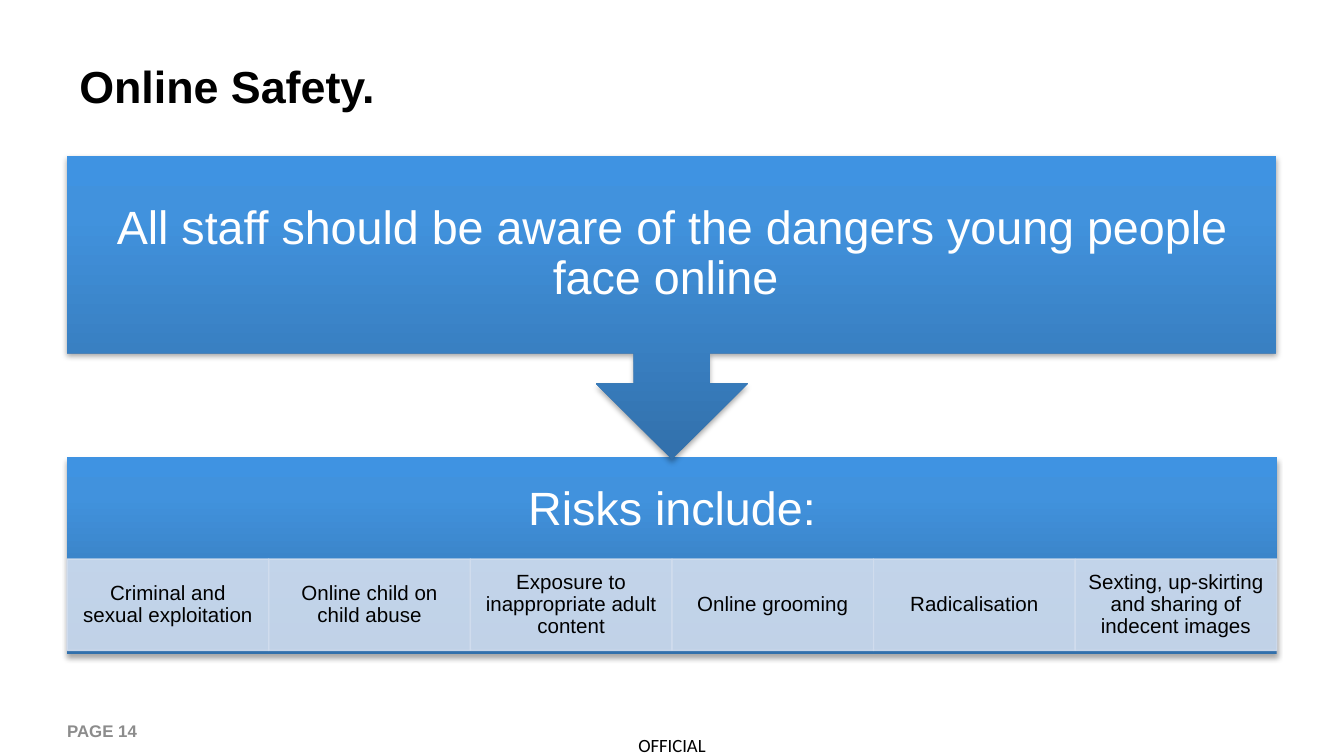
from lxml import etree
from pptx import Presentation
from pptx import util as u
from pptx.dml.color import RGBColor
from pptx.enum import shapes, text
from pptx.oxml import parse_xml
from pptx.oxml.ns import nsdecls, qn

INK, WHITE, GREY, PALE = "000000", "FFFFFF", "8C8C8C", "D1DDEE"
BLUES = [(0, "3270AB"), (80, "4192DD"), (100, "3F93E2")]
LEFT, WIDTH = 0.5, 9
RISKS = [
    "Criminal and sexual exploitation",
    "Online child on child abuse",
    "Exposure to inappropriate adult content",
    "Online grooming",
    "Radicalisation",
    "Sexting, up-skirting and sharing of indecent images",
]
FOOTER = {"size": 9, "margins": (0.09, 0.04), "color": GREY, "bold": True}
TITLE = {"size": 24, "margins": (0.09, 0.04), "bold": True}
HEADING = {"size": 25, "color": WHITE, "margins": (0.19, 0.19),
           "centred": True, "spacing": 0.9}
RISK = {"size": 11, "margins": (0.09, 0.02), "centred": True, "spacing": 0.9}


def rgb(value):
    return RGBColor.from_string(value)


def inches(*lengths):
    return [u.Inches(length) for length in lengths]


def write(shape, wording, size, margins, color=INK, font="Arial", bold=False,
          centred=False, spacing=1.0, wrap=True):
    frame = shape.text_frame
    across, down = inches(*margins)
    settings = {"margin_left": across, "margin_right": across,
                "margin_top": down, "margin_bottom": down,
                "word_wrap": wrap, "vertical_anchor": text.MSO_ANCHOR.MIDDLE}
    for name, value in settings.items():
        setattr(frame, name, value)
    paragraph = frame.paragraphs[0]
    paragraph.alignment = text.PP_ALIGN.CENTER if centred else text.PP_ALIGN.LEFT
    paragraph.line_spacing = spacing
    run = paragraph.add_run()
    run.text = wording
    for name, value in {"name": font, "size": u.Pt(size), "bold": bold}.items():
        setattr(run.font, name, value)
    run.font.color.rgb = rgb(color)


def add_label(slide, box, wording, **style):
    write(slide.shapes.add_textbox(*inches(*box)), wording, **style)


def add_blue_panel(slide, kind, box):
    panel = slide.shapes.add_shape(kind, *inches(*box))
    panel.line.fill.background()
    panel.shadow.inherit = False
    properties = panel._element.spPr
    stops = "".join(
        f'<a:gs pos="{place * 1000}"><a:srgbClr val="{color}"/></a:gs>'
        for place, color in BLUES)
    properties.find(qn("a:prstGeom")).addnext(parse_xml(
        f'<a:gradFill {nsdecls("a")} rotWithShape="0"><a:gsLst>{stops}</a:gsLst>'
        '<a:lin ang="16200000" scaled="0"/></a:gradFill>'))
    properties.find(qn("a:effectLst")).append(parse_xml(
        f'<a:outerShdw {nsdecls("a")} blurRad="{u.Pt(3.1)}" dist="{u.Pt(1.8)}" '
        'dir="5400000" rotWithShape="0"><a:srgbClr val="000000">'
        '<a:alpha val="35000"/></a:srgbClr></a:outerShdw>'))
    return panel


def add_risk(slide, box, wording):
    cell = slide.shapes.add_shape(shapes.MSO_SHAPE.RECTANGLE, *inches(*box))
    cell.shadow.inherit = False
    cell.fill.solid()
    cell.fill.fore_color.rgb = rgb(PALE)
    cell.line.color.rgb = rgb(PALE)
    cell.line.width = u.Pt(0.75)
    for color in cell._element.spPr.iter(qn("a:srgbClr")):
        etree.SubElement(color, qn("a:alpha"), val="90000")
    write(cell, wording, **RISK)


def main():
    deck = Presentation()
    deck.slide_width, deck.slide_height = inches(10, 10 * 9 / 16)
    slide = deck.slides.add_slide(deck.slide_layouts[6])

    add_label(slide, (4.75, 5.46, 0.53, 0.17), "OFFICIAL", size=10,
              margins=(0, 0), font="Calibri", wrap=False)
    add_label(slide, (0.41, 5.29, 2.33, 0.3), "PAGE 14", **FOOTER)
    add_label(slide, (LEFT, 0.23, WIDTH, 0.82), "Online Safety.", **TITLE)

    add_blue_panel(slide, shapes.MSO_SHAPE.RECTANGLE, (LEFT, 3.4, WIDTH, 1.47))
    add_label(slide, (LEFT, 3.4, WIDTH, 0.79), "Risks include:", **HEADING)
    column = WIDTH / len(RISKS)
    for index, risk in enumerate(RISKS):
        add_risk(slide, (LEFT + index * column, 4.16, column, 0.68), risk)

    warning = add_blue_panel(slide, shapes.MSO_SHAPE.DOWN_ARROW_CALLOUT,
                             (LEFT, 1.16, WIDTH, 2.26))
    write(warning, "All staff should be aware of the dangers young people face online ",
          **HEADING)

    deck.save("out.pptx")


if __name__ == "__main__":
    main()
